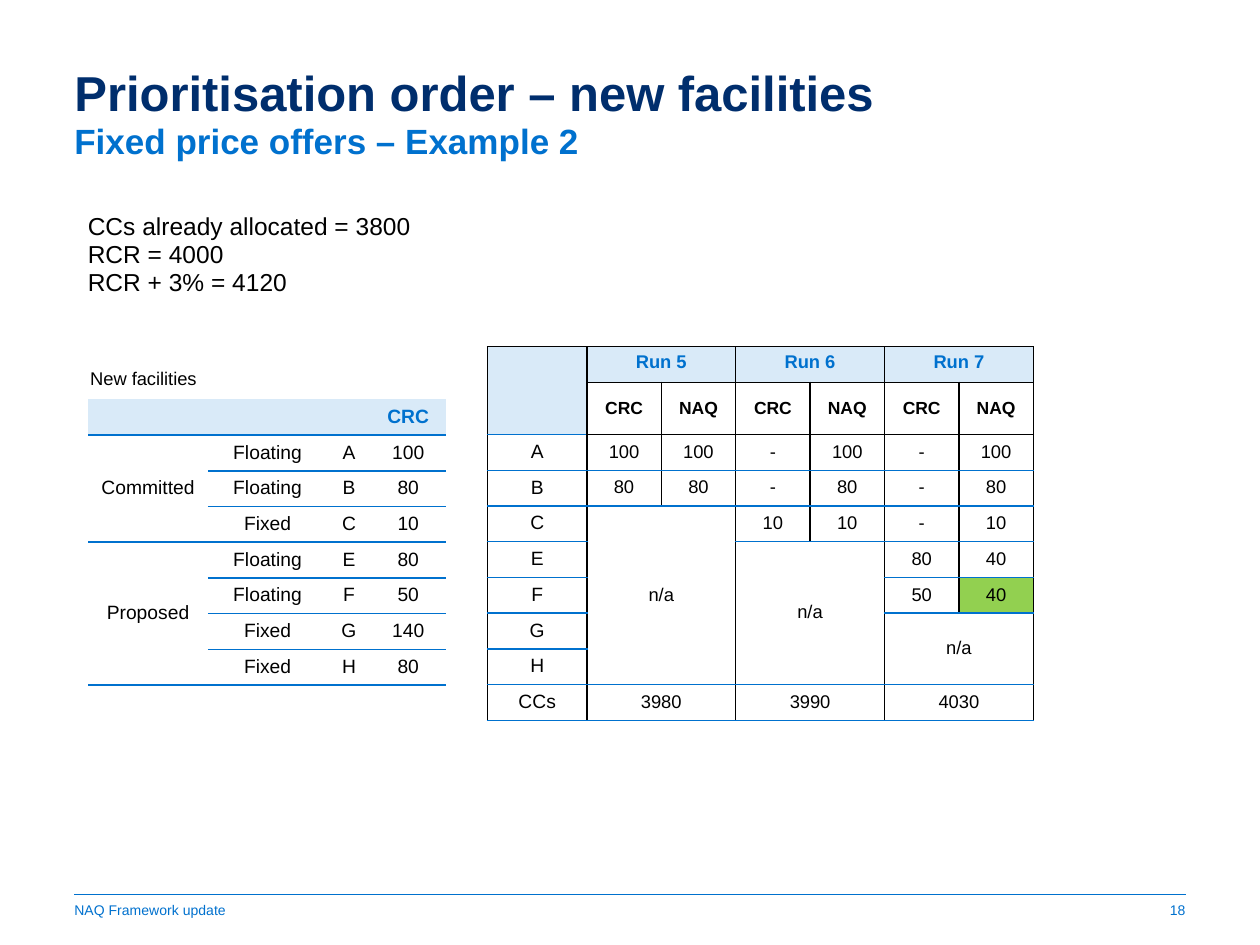
import pptx
import pptx.util
import pptx.dml.color
import pptx.enum.shapes
import pptx.enum.text
import pptx.oxml
import pptx.oxml.ns

Cm, Pt = pptx.util.Cm, pptx.util.Pt
ALIGN, ANCHOR = pptx.enum.text.PP_ALIGN, pptx.enum.text.MSO_ANCHOR
BLUE, NAVY, BLACK, PALE, GREEN = "0071CE", "002E6D", "000000", "D9EAF8", "92D050"
NO_STYLE = "{2D5ABB26-0587-4C30-8999-92F81FD0307C}"
ROW = 0.72


def colour(value):
    return pptx.dml.color.RGBColor.from_string(value)


def apply(target, formats):
    for name, value in formats.items():
        setattr(target, name, value)


def write(frame, lines, size, ink=BLACK, bold=False, align=ALIGN.LEFT, spacing=0.95):
    for index, line in enumerate(lines):
        paragraph = frame.paragraphs[0] if index == 0 else frame.add_paragraph()
        apply(paragraph, {"alignment": align, "line_spacing": spacing,
                          "space_before": Pt(0), "space_after": Pt(0)})
        run = paragraph.add_run()
        run.text = line
        apply(run.font, {"name": "Arial", "size": Pt(size), "bold": bold})
        run.font.color.rgb = colour(ink)


def set_frame(frame, side=0.1, vertical=0.1, anchor=ANCHOR.TOP):
    apply(frame, {"word_wrap": True, "vertical_anchor": anchor,
                  "margin_left": Cm(side), "margin_right": Cm(side),
                  "margin_top": Cm(vertical), "margin_bottom": Cm(vertical)})


def add_text(slide, box, lines, size, margins=None, **style):
    frame = slide.shapes.add_textbox(*map(Cm, box)).text_frame
    set_frame(frame, **(margins or {}))
    write(frame, lines, size, **style)


def add_heading(slide, box):
    left, top, width, height = box
    title = slide.shapes.title
    apply(title, {"left": Cm(left), "top": Cm(top), "width": Cm(width), "height": Cm(height)})
    set_frame(title.text_frame)
    title.text_frame.auto_size = pptx.enum.text.MSO_AUTO_SIZE.NONE
    write(title.text_frame, ["Prioritisation order – new facilities"], 28, NAVY, True, spacing=0.9)
    add_text(slide, (left, top + 1.07, width, height), ["Fixed price offers – Example 2"],
             20, ink=BLUE, bold=True)


def add_footer(slide, box):
    left, top, width, height = box
    rule = slide.shapes.add_connector(pptx.enum.shapes.MSO_CONNECTOR.STRAIGHT,
                                      Cm(left + 0.1), Cm(top), Cm(left + width - 0.1), Cm(top))
    rule.line.color.rgb = colour(BLUE)
    rule.line.width = Pt(0.5)
    rule._element.spPr.append(pptx.oxml.parse_xml(f"<a:effectLst {pptx.oxml.ns.nsdecls('a')}/>"))
    middle = {"anchor": ANCHOR.MIDDLE}
    add_text(slide, (left, top + 0.08, 8.5, height), ["NAQ Framework update"], 8, middle, ink=BLUE)
    add_text(slide, (left + width - 2, top + 0.08, 2, height), ["18"], 8, middle,
             ink=BLUE, align=ALIGN.RIGHT)


def set_border(cell, side, ink):
    paint = f'<a:solidFill><a:srgbClr val="{ink}"/></a:solidFill>' if ink else "<a:noFill/>"
    cell._tc.get_or_add_tcPr().append(pptx.oxml.parse_xml(
        f'<a:ln{side} {pptx.oxml.ns.nsdecls("a")} w="{Pt(1)}">{paint}</a:ln{side}>'))


def add_grid(slide, left, top, columns, heights, texts, spans, style, borders):
    table = slide.shapes.add_table(len(heights), len(columns), Cm(left), Cm(top),
                                   Cm(sum(columns)), Cm(sum(heights))).table
    apply(table, {"first_row": False, "horz_banding": False})
    table._tbl.tblPr[0].text = NO_STYLE
    for column, width in zip(table.columns, columns):
        column.width = Cm(width)
    for row, height in zip(table.rows, heights):
        row.height = Cm(height)
    owners = {(r + i, c + j): (r, c) for (r, c), (down, across) in spans.items()
              for i in range(down) for j in range(across)}
    for r, line in enumerate(texts):
        for c, text in enumerate(line):
            cell = table.cell(r, c)
            owner = owners.get((r, c), (r, c))
            down, across = spans.get(owner, (1, 1))
            last = (owner[0] + down - 1, owner[1] + across - 1)
            outer = {"L": c == owner[1], "R": c == last[1], "T": r == owner[0], "B": r == last[0]}
            edges = borders(owner, last)
            for side in "LRTB":
                shown = outer[side] or (r, c) == owner
                set_border(cell, side, edges.get(side) if shown else None)
            look = dict(style(r, c))
            fill, anchor = look.pop("fill", None), look.pop("anchor", ANCHOR.MIDDLE)
            if fill:
                cell.fill.solid()
                cell.fill.fore_color.rgb = colour(fill)
            else:
                cell.fill.background()
            apply(cell, {"vertical_anchor": anchor, "margin_left": Cm(0.1), "margin_right": Cm(0.1),
                         "margin_top": Cm(0.12), "margin_bottom": Cm(0.12)})
            if text:
                write(cell.text_frame, [text], align=ALIGN.CENTER, **look)
            else:
                cell.text_frame.paragraphs[0]._p.get_or_add_endParaRPr().set("sz", "1000")
    for (r, c), (down, across) in spans.items():
        table.cell(r, c).merge(table.cell(r + down - 1, c + across - 1))


def add_facilities(slide, left, top):
    add_text(slide, (left - 0.21, top - 0.74, 5.33, 0.69), ["New facilities"], 10.5,
             {"side": 0.25, "vertical": 0.13})
    texts = [
        ["", "", "", "CRC"],
        ["Committed", "Floating", "A", "100"],
        ["", "Floating", "B", "80"],
        ["", "Fixed", "C", "10"],
        ["Proposed", "Floating", "E", "80"],
        ["", "Floating", "F", "50"],
        ["", "Fixed", "G", "140"],
        ["", "Fixed", "H", "80"],
    ]

    def style(r, c):
        return {"size": 11, "ink": BLUE, "bold": True, "fill": PALE} if r == 0 else {"size": 11}

    def borders(first, last):
        return {"B": BLUE, "T": BLUE if first[0] else None}

    add_grid(slide, left, top, [2.41, 2.41, 0.87, 1.52], [ROW] * len(texts), texts,
             {(1, 0): (3, 1), (4, 0): (4, 1)}, style, borders)


def add_runs(slide, left, top):
    texts = [
        ["", "Run 5", "", "Run 6", "", "Run 7", ""],
        [""] + ["CRC", "NAQ"] * 3,
        ["A", "100", "100", "-", "100", "-", "100"],
        ["B", "80", "80", "-", "80", "-", "80"],
        ["C", "n/a", "", "10", "10", "-", "10"],
        ["E", "", "", "n/a", "", "80", "40"],
        ["F", "", "", "", "", "50", "40"],
        ["G", "", "", "", "", "n/a", ""],
        ["H", "", "", "", "", "", ""],
        ["CCs", "3980", "", "3990", "", "4030", ""],
    ]
    spans = {(0, 0): (2, 1), (4, 1): (5, 2), (5, 3): (4, 2), (7, 5): (2, 2)}
    spans.update({(r, c): (1, 2) for r in (0, 9) for c in (1, 3, 5)})

    def style(r, c):
        if r == 0:
            return {"size": 10.5, "ink": BLUE, "bold": True, "fill": PALE, "anchor": ANCHOR.TOP}
        if r == 1:
            return {"size": 10, "bold": True}
        return {"size": 10.5 if c else 11, "fill": GREEN if (r, c) == (6, 6) else None}

    def borders(first, last):
        header_above = first[0] < 2 or (first[0] == 2 and first[1] > 0)
        return {"L": BLACK, "R": BLACK, "T": BLACK if header_above else BLUE,
                "B": BLACK if last[0] < 2 and first[1] > 0 else BLUE}

    add_grid(slide, left, top, [2] + [1.5] * 6, [ROW, 1.05] + [ROW] * 8,
             texts, spans, style, borders)


def main():
    deck = pptx.Presentation()
    apply(deck, {"slide_width": Cm(25.4), "slide_height": Cm(19.05)})
    slide = deck.slides.add_slide(deck.slide_layouts[5])
    add_heading(slide, (1.4, 1.3, 18.44, 1.2))
    add_text(slide, (1.52, 4.17, 7.95, 1.96),
             ["CCs already allocated = 3800", "RCR = 4000", "RCR + 3% = 4120"], 14,
             {"side": 0.25, "vertical": 0.13})
    add_facilities(slide, 1.78, 8.05)
    add_runs(slide, 9.83, 6.99)
    add_footer(slide, (1.4, 18.03, 22.6, 0.5))
    deck.save("out.pptx")


if __name__ == "__main__":
    main()
